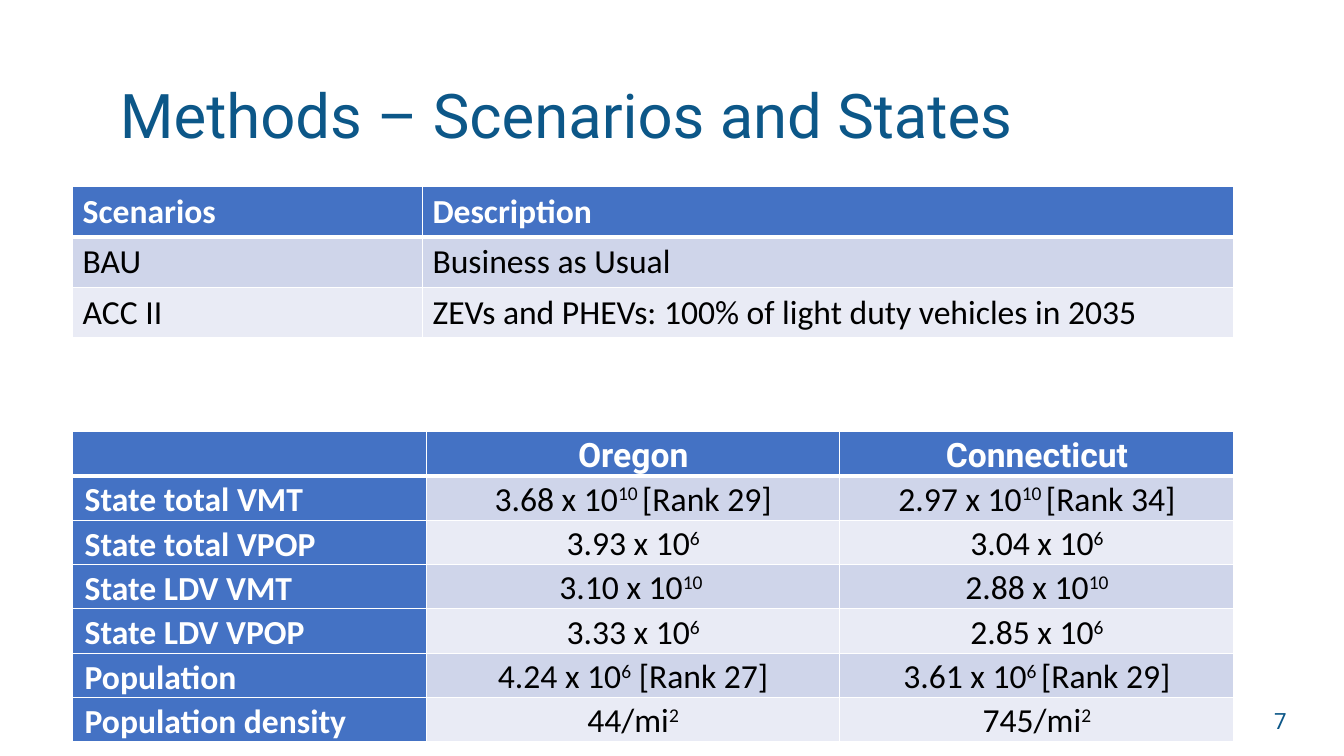
from lxml import etree
from pptx import Presentation
from pptx.dml.color import RGBColor
from pptx.enum.text import MSO_ANCHOR, PP_ALIGN
from pptx.oxml.ns import qn
from pptx.util import Inches, Pt

LEFT, CENTER, RIGHT = PP_ALIGN.LEFT, PP_ALIGN.CENTER, PP_ALIGN.RIGHT
TOP, MIDDLE, BOTTOM = MSO_ANCHOR.TOP, MSO_ANCHOR.MIDDLE, MSO_ANCHOR.BOTTOM

NAVY = RGBColor(0x0C, 0x57, 0x88)
BLUE = RGBColor(0x44, 0x72, 0xC4)
BAND_DARK = RGBColor(0xCF, 0xD5, 0xEA)
BAND_LIGHT = RGBColor(0xE9, 0xEB, 0xF5)
WHITE = RGBColor(0xFF, 0xFF, 0xFF)
BLACK = RGBColor(0, 0, 0)

# Content: text between a pair of ^ marks is superscript
TITLE = "Methods – Scenarios and States"
PAGE = "7"
SCENARIOS = [
    ("Scenarios", "Description"),
    ("BAU", "Business as Usual"),
    ("ACC II", "ZEVs and PHEVs: 100% of light duty vehicles in 2035"),
]
STATES = [
    ("", "Oregon", "Connecticut"),
    ("State total VMT", "3.68 x 10^10 ^[Rank 29]", "2.97 x 10^10 ^[Rank 34]"),
    ("State total VPOP", "3.93 x 10^6", "3.04 x 10^6"),
    ("State LDV VMT", "3.10 x 10^10 ", "2.88 x 10^10"),
    ("State LDV VPOP", "3.33 x 10^6", "2.85 x 10^6"),
    ("Population", "4.24 x 10^6^ [Rank 27]", "3.61 x 10^6 ^[Rank 29]"),
    ("Population density", "44/mi^2", "745/mi^2"),
]

# Cell formats: margins are left, top, right, bottom
PLAIN = dict(align=LEFT, anchor=TOP, margins=(0.1, 0.05, 0.1, 0.05), para={})
LABEL = dict(align=LEFT, anchor=MIDDLE, margins=(0.12, 0, 0.12, 0),
             para=dict(line_spacing=1.1, space_before=Pt(2), space_after=Pt(2)))
HEADING = dict(LABEL, align=CENTER)
VALUE = dict(align=CENTER, anchor=BOTTOM, margins=(0.01, 0.01, 0.01, 0), para={})


def write(p, text, color, **font):
    for i, part in enumerate(text.split("^")):
        if not part:
            continue
        r = p.add_run()
        r.text = part
        r.font.color.rgb = color
        for name, value in font.items():
            setattr(r.font, name, value)
        if i % 2:
            r._r.get_or_add_rPr().set("baseline", "30000")


def add_text(slide, box, text, size, align):
    tf = slide.shapes.add_textbox(*map(Inches, box)).text_frame
    tf.word_wrap = True
    tf.vertical_anchor = MIDDLE
    p = tf.paragraphs[0]
    p.alignment = align
    write(p, text, NAVY, size=Pt(size), name="Roboto")


def set_borders(cell, widths):
    tcPr = cell._tc.get_or_add_tcPr()
    for i, (side, width) in enumerate(widths.items()):
        ln = etree.Element(qn("a:ln" + side), w=str(Pt(width)))
        fill = etree.SubElement(ln, qn("a:solidFill"))
        etree.SubElement(fill, qn("a:srgbClr"), val=str(WHITE))
        tcPr.insert(i, ln)


def add_table(slide, rows, top, widths, height, label_column):
    left, total = Inches(0.72), Inches(sum(widths))
    table = slide.shapes.add_table(len(rows), len(widths), left, Inches(top),
                                   total, Inches(height * len(rows))).table
    table.horz_banding = False
    for col, width in zip(table.columns, widths):
        col.width = Inches(width)
    for i, row in enumerate(rows):
        table.rows[i].height = Inches(height)
        for j, text in enumerate(row):
            cell = table.cell(i, j)
            strong = i == 0 or (label_column and j == 0)
            if not label_column:
                style = PLAIN
            elif i == 0:
                style = HEADING
            else:
                style = VALUE if j else LABEL
            # Fill and borders, with a heavy rule below the header
            cell.fill.solid()
            cell.fill.fore_color.rgb = (
                BLUE if strong else BAND_DARK if i % 2 else BAND_LIGHT)
            set_borders(cell, dict(L=1, R=1, T=3 if i == 1 else 1,
                                   B=3 if i == 0 else 1))
            # Text
            cell.vertical_anchor = style["anchor"]
            for side, margin in zip(("left", "top", "right", "bottom"),
                                    style["margins"]):
                setattr(cell, "margin_" + side, Inches(margin))
            p = cell.text_frame.paragraphs[0]
            p.alignment = style["align"]
            for name, value in style["para"].items():
                setattr(p, name, value)
            write(p, text, WHITE if strong else BLACK, size=Pt(24), bold=strong,
                  name="Roboto" if style is HEADING else "Calibri")


def main():
    prs = Presentation()
    prs.slide_width, prs.slide_height = Inches(13.33), Inches(7.5)
    slide = prs.slides.add_slide(prs.slide_layouts[6])
    add_text(slide, (1.09, 0.4, 11.22, 1.45), TITLE, 44, LEFT)
    add_text(slide, (9.42, 6.95, 3.44, 0.4), PAGE, 16, RIGHT)
    add_table(slide, SCENARIOS, 1.85, (3.47, 8.05), 0.5, False)
    add_table(slide, STATES, 4.28, (3.51, 4.1, 3.91), 0.44, True)
    prs.save("out.pptx")


if __name__ == "__main__":
    main()
